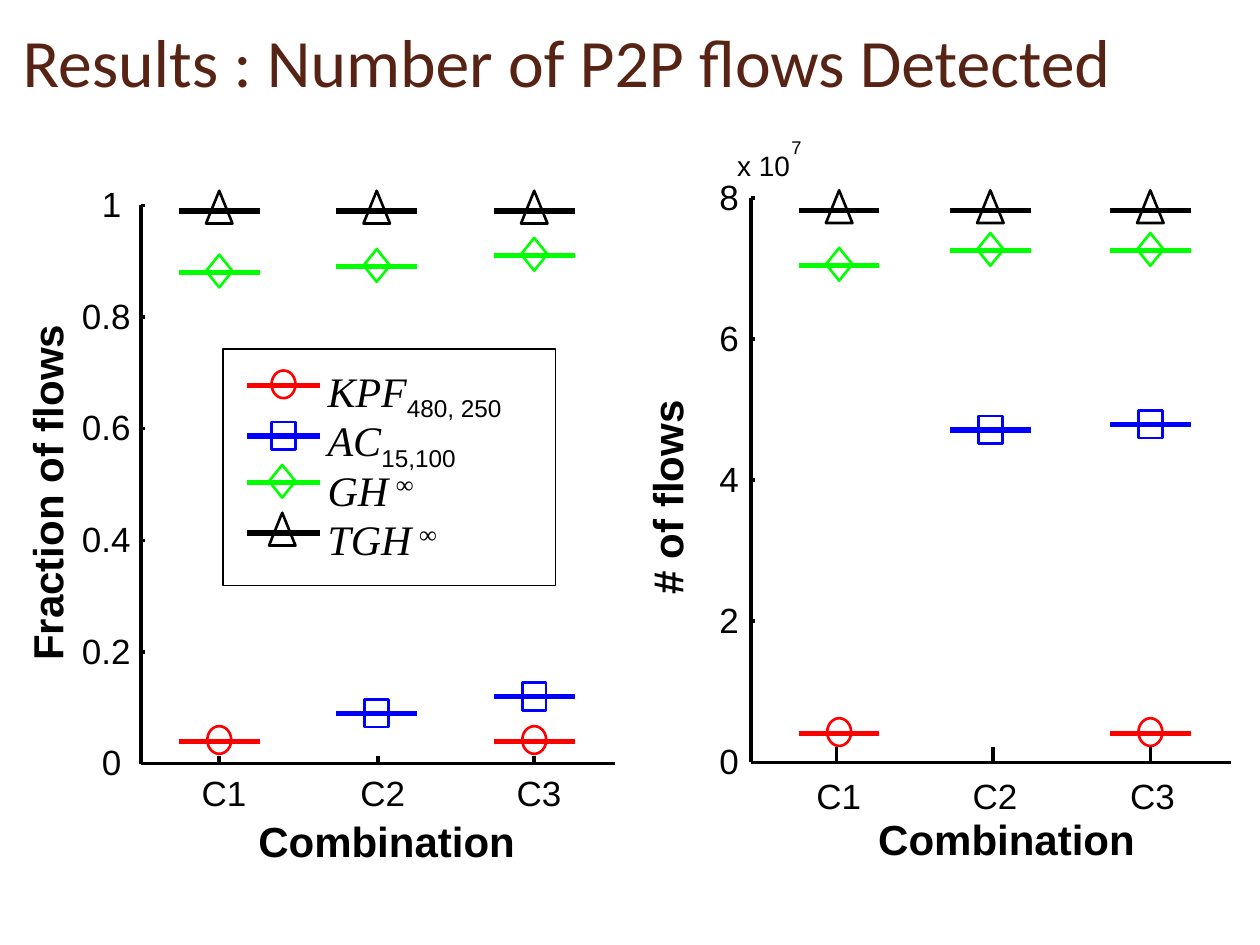
from dataclasses import dataclass

from lxml import etree
from pptx import Presentation
from pptx import util as u
from pptx.dml.color import RGBColor
from pptx.enum import shapes as kinds, text as tx
from pptx.oxml.ns import qn

Inches, Pt = u.Inches, u.Pt
MARK = kinds.MSO_SHAPE


@dataclass(frozen=True)
class Theme:
    ink: str = "000000"
    title: str = "572314"
    title_font: str = "Calibri"
    font: str = "Arial"
    math_font: str = "Times New Roman"
    title_size: float = 38.7
    axis_size: float = 24
    tick_size: float = 20
    scale_size: float = 16
    power_size: float = 10.5
    gap_size: float = 18
    hairline: float = 0
    frame_line: float = 0.75
    marker_line: float = 1.5
    dash_line: float = 3


@dataclass(frozen=True)
class Method:
    color: str
    marker: int
    width: float
    height: float
    lift: float  # how far the marker's middle sits above its dash


THEME = Theme()
METHODS = {
    "KPF": Method("FF0000", MARK.OVAL, 0.19, 0.22, 0.01),
    "AC": Method("0000FF", MARK.RECTANGLE, 0.19, 0.22, 0),
    "GH": Method("00FF00", MARK.DIAMOND, 0.21, 0.26, 0.01),
    "TGH": Method("000000", MARK.ISOSCELES_TRIANGLE, 0.21, 0.26, 0.03),
}


def style_font(font, size, name=THEME.font, color=THEME.ink, bold=None):
    font.size, font.name, font.bold = Pt(size), name, bold
    font.color.rgb = RGBColor.from_string(color)


def add_line(parts, x1, y1, x2, y2, color=THEME.ink, width=THEME.hairline):
    line = parts.add_connector(kinds.MSO_CONNECTOR.STRAIGHT,
                               Inches(x1), Inches(y1), Inches(x2), Inches(y2))
    line.line.color.rgb = RGBColor.from_string(color)
    line.line.width = Pt(width)
    etree.SubElement(line._element.spPr, qn("a:effectLst"))


def add_outline(parts, kind, left, top, width, height, color, weight):
    shape = parts.add_shape(kind, Inches(left), Inches(top), Inches(width), Inches(height))
    shape.shadow.inherit = False
    shape.fill.background()
    shape.line.color.rgb = RGBColor.from_string(color)
    shape.line.width = Pt(weight)


def add_paragraph_box(parts, left, top, width, height):
    """Add a text box without margins; return it and its first paragraph."""
    box = parts.add_textbox(Inches(left), Inches(top), Inches(width), Inches(height))
    frame = box.text_frame
    frame.margin_left = frame.margin_right = frame.margin_top = frame.margin_bottom = 0
    frame.word_wrap = False
    frame.auto_size = tx.MSO_AUTO_SIZE.SHAPE_TO_FIT_TEXT
    return box, frame.paragraphs[0]


def add_label(parts, wording, left, top, width, height, size, bold=None, rotation=0):
    box, paragraph = add_paragraph_box(parts, left, top, width, height)
    box.rotation = rotation
    paragraph.text = wording
    style_font(paragraph.font, size, bold=bold)


def add_mark(parts, method, dash_left, dash_width, middle, y):
    """Draw one method's dash with its marker centred on middle."""
    add_line(parts, dash_left, y, dash_left + dash_width, y, method.color, THEME.dash_line)
    add_outline(parts, method.marker, middle - method.width / 2,
                y - method.lift - method.height / 2, method.width, method.height,
                method.color, THEME.marker_line)


def add_plot(parts, box, top_value, ticks, category_x, mark_x, tick_height,
             category_offset, series):
    """ticks holds (value, label, distance of label from axis); x values start at the axis."""
    left, top, width, height = box
    bottom = top + height

    def y_of(value):
        return bottom - value / top_value * height

    add_line(parts, left, bottom, left + width, bottom)
    add_line(parts, left, bottom, left, top)
    shift, drop = category_offset
    for number, x in enumerate(category_x, 1):
        add_line(parts, left + x, bottom, left + x, bottom - tick_height)
        add_label(parts, f"C{number}", left + x - shift, bottom + drop,
                  0.36, 0.34, THEME.tick_size)
    for value, label, distance in ticks:
        y = y_of(value)
        add_line(parts, left, y, left + 0.03, y)
        add_label(parts, label, left - distance, y - 0.18,
                  0.16 if len(label) == 1 else 0.39, 0.34, THEME.tick_size)
    for name, values in series.items():
        for x, value in zip(mark_x, values):
            if value is not None:
                add_mark(parts, METHODS[name], left + x - 0.32, 0.64, left + x, y_of(value))


def add_axis_titles(parts, box, across, across_left, up, up_width, up_middle):
    """Place the axis titles; up_middle is the upright title's centre from the box corner."""
    left, top, _, height = box
    add_label(parts, across, left + across_left, top + height + 0.41, 2.05, 0.4,
              THEME.axis_size, bold=True)
    x, y = up_middle
    add_label(parts, up, left + x - up_width / 2, top + y - 0.2, up_width, 0.4,
              THEME.axis_size, bold=True, rotation=270)


def add_legend(parts, box):
    left, top, width, height = box
    # name, subscript or superscript, baseline, label width, dash position
    rows = [("KPF", "480, 250", -25, 1.51, 0.29), ("AC", "15,100", -25, 1.11, 0.69),
            ("GH", "∞", 30, 0.73, 1.06), ("TGH", "∞", 30, 0.9, 1.46)]
    for row, (name, index, baseline, label_width, dash_y) in enumerate(rows):
        _, paragraph = add_paragraph_box(parts, left + 0.83, top + 0.13 + row * 0.393,
                                         label_width, 0.4)
        raised = baseline > 0
        pieces = [(name, THEME.axis_size, True, 0)]
        if raised:
            pieces.append((" ", THEME.gap_size, True, 0))
        pieces.append((index, THEME.axis_size, raised, baseline))
        for wording, size, is_math, shift in pieces:
            run = paragraph.add_run()
            run.text = wording
            style_font(run.font, size, THEME.math_font if is_math else THEME.font)
            run.font.italic = is_math
            if shift:
                run._r.get_or_add_rPr().set("baseline", str(shift * 1000))
        add_mark(parts, METHODS[name], left + 0.19, 0.58,
                 left + (0.47 if raised else 0.48), top + dash_y)
    add_outline(parts, MARK.RECTANGLE, left, top, width, height, THEME.ink, THEME.frame_line)


def add_title(slide, box, wording):
    title = slide.shapes.title
    title.left, title.top, title.width, title.height = map(Inches, box)
    frame = title.text_frame
    frame.text = wording
    frame.vertical_anchor = tx.MSO_ANCHOR.MIDDLE
    frame.auto_size = tx.MSO_AUTO_SIZE.NONE
    paragraph = frame.paragraphs[0]
    paragraph.alignment = tx.PP_ALIGN.LEFT
    style_font(paragraph.font, THEME.title_size, THEME.title_font, THEME.title)


def add_fraction_plot(parts, box):
    labels = ["0", "0.2", "0.4", "0.6", "0.8", "1"]
    ticks = [(float(label), label, 0.31 if len(label) == 1 else 0.47) for label in labels]
    add_plot(parts, box, 1, ticks, (0.62, 1.88, 3.12), (0.62, 1.87, 3.12), 0.06, (0.14, 0.06),
             {"KPF": (0.04, None, 0.04), "AC": (None, 0.09, 0.12),
              "GH": (0.88, 0.89, 0.91), "TGH": (0.99, 0.99, 0.99)})
    add_axis_titles(parts, box, "Combination", 0.93, "Fraction of flows", 2.69, (-0.75, 2.27))


def add_count_plot(parts, box):
    left, top = box[:2]
    add_label(parts, "x 10", left - 0.11, top - 0.39, 0.42, 0.27, THEME.scale_size)
    add_label(parts, "7", left + 0.32, top - 0.49, 0.08, 0.18, THEME.power_size)
    ticks = [(value, str(value), 0.25) for value in range(0, 9, 2)]
    add_plot(parts, box, 8, ticks, (0.68, 1.92, 3.17), (0.7, 1.9, 3.17), 0.12, (0.16, 0.1),
             {"KPF": (0.41, None, 0.41), "AC": (None, 4.71, 4.79),
              "GH": (7.04, 7.25, 7.25), "TGH": (7.82, 7.82, 7.82)})
    add_axis_titles(parts, box, "Combination", 1.01, "# of flows", 1.55, (-0.67, 2.37))


def main():
    deck = Presentation()
    deck.slide_width, deck.slide_height = Inches(10), Inches(7.5)
    slide = deck.slides.add_slide(deck.slide_layouts[5])
    add_title(slide, (0.08, 0.13, 9.75, 0.7), "Results : Number of P2P flows Detected")
    add_fraction_plot(slide.shapes, (1.12, 1.63, 3.76, 4.43))
    add_legend(slide.shapes, (1.77, 2.77, 2.64, 1.88))
    add_count_plot(slide.shapes.add_group_shape().shapes, (5.96, 1.57, 3.81, 4.48))
    deck.save("out.pptx")


if __name__ == "__main__":
    main()
